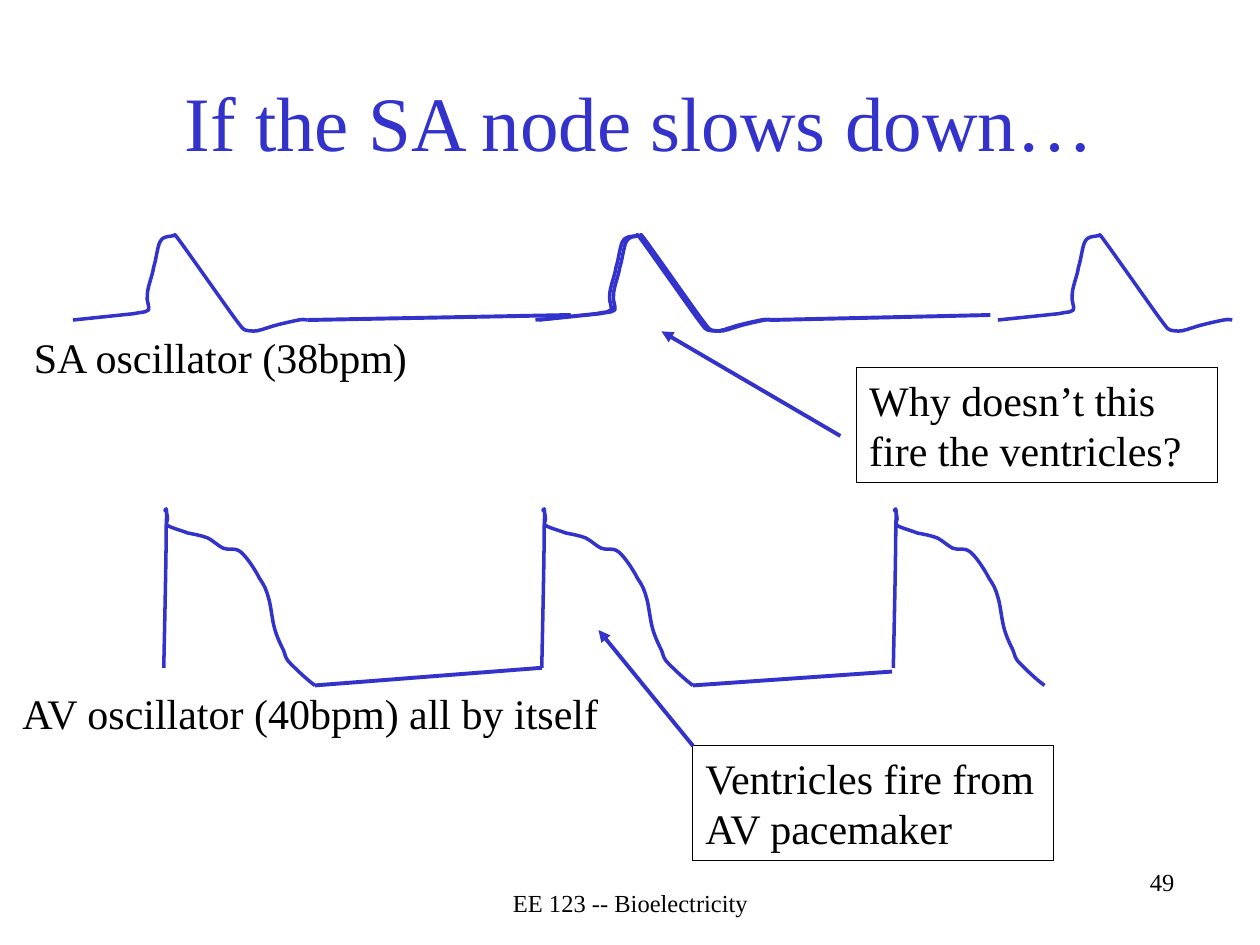
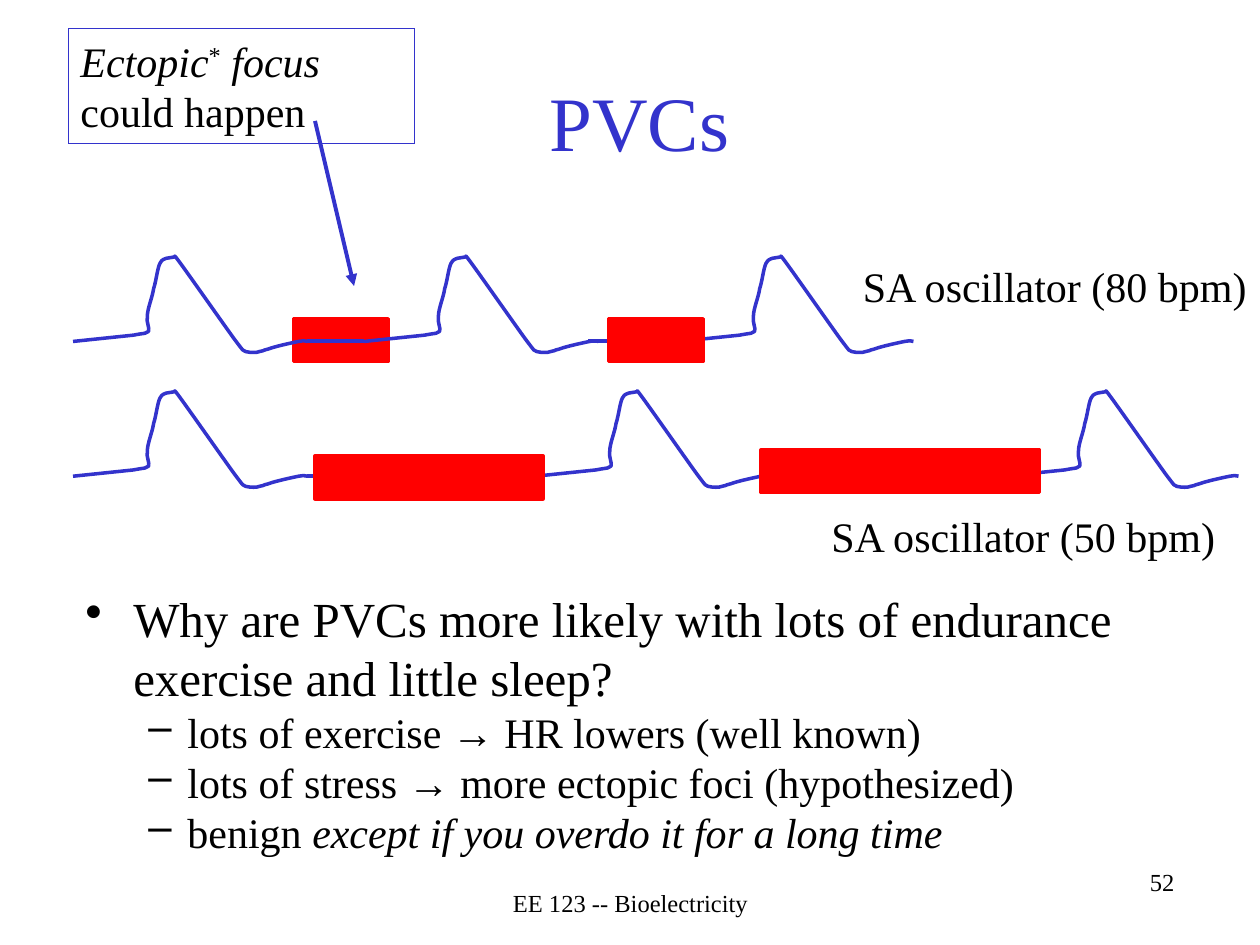
from lxml.etree import SubElement
from pptx import Presentation
from pptx.dml.color import RGBColor
from pptx.enum.shapes import MSO_CONNECTOR, MSO_SHAPE
from pptx.enum.text import MSO_ANCHOR, MSO_AUTO_SIZE, PP_ALIGN
from pptx.oxml.ns import qn
from pptx.util import Inches, Pt

BLUE = RGBColor(0x33, 0x33, 0xCC)
RED = RGBColor(0xFF, 0x00, 0x00)
BLACK = RGBColor(0x00, 0x00, 0x00)
FONT = "Times New Roman"
FOOTER = "EE 123 -- Bioelectricity"

# Beats are in inches from the start on the baseline. A row of two numbers is
# the end of a straight piece; six are two control points and a curve's end.
SA_BEAT = [
    (0.48, -0.05),
    (0.58, -0.07, 0.58, -0.06, 0.60, -0.08),
    (0.61, -0.11, 0.58, -0.15, 0.59, -0.20),
    (0.59, -0.26, 0.63, -0.35, 0.64, -0.42),
    (0.66, -0.48, 0.67, -0.58, 0.69, -0.62),
    (0.71, -0.66, 0.73, -0.65, 0.74, -0.66),
    (0.76, -0.66, 0.78, -0.67, 0.80, -0.67),
    (0.82, -0.66, 0.78, -0.72, 0.86, -0.61),
    (0.94, -0.50, 1.20, -0.13, 1.28, -0.02),
    (1.37, 0.10, 1.34, 0.06, 1.37, 0.08),
    (1.41, 0.09, 1.46, 0.09, 1.48, 0.08),
    (1.51, 0.08, 1.50, 0.07, 1.55, 0.06),
    (1.60, 0.04, 1.74, 0.01, 1.79, 0),
    (1.84, -0.01, 1.85, 0, 1.86, 0),
]
AV_BEAT = [
    (0.01, -0.46, 0.02, -0.92, 0.02, -1.13),
    (0.03, -1.33, 0.01, -1.24, 0.01, -1.25),
    (0.02, -1.26, 0.03, -1.20, 0.03, -1.18),
    (0.03, -1.16, 0.01, -1.14, 0.03, -1.13),
    (0.06, -1.11, 0.14, -1.09, 0.19, -1.07),
    (0.24, -1.06, 0.30, -1.05, 0.35, -1.03),
    (0.39, -1.01, 0.43, -0.97, 0.47, -0.95),
    (0.51, -0.93, 0.56, -0.96, 0.61, -0.92),
    (0.66, -0.88, 0.73, -0.77, 0.76, -0.71),
    (0.80, -0.65, 0.81, -0.63, 0.83, -0.56),
    (0.85, -0.50, 0.86, -0.38, 0.88, -0.31),
    (0.90, -0.24, 0.93, -0.18, 0.95, -0.14),
    (0.97, -0.09, 0.96, -0.08, 1.01, -0.03),
    (1.05, 0.01, 1.12, 0.08, 1.20, 0.14),
]

# Paragraphs are strings or lists of (text, style); styles: i = italic, s = superscript.
# Rows of beats: (beat, baseline, starts). Bars and labels: (left, top, width, height).
SLIDES = [
    {
        "title": "If the SA node slows down…",
        "page": "49",
        "border": BLACK,
        "under": [],
        "beats": [(SA_BEAT, 2.54, (0.58, 4.25, 4.28, 7.92)),
                  (AV_BEAT, 5.30, (1.30, 4.30, 7.09))],
        "links": [(2.44, 2.54, 4.53, 2.50), (6.11, 2.54, 7.86, 2.50),
                  (2.50, 5.44, 4.30, 5.30), (5.50, 5.44, 7.08, 5.33)],
        "over": [],
        "labels": [((0.17, 2.58, 4, 0.5), "SA oscillator (38bpm)"),
                   ((0.08, 5.41, 4.97, 0.5), "AV oscillator (40bpm) all by itself")],
        "notes": [((6.80, 2.92, 2.86, 0.91), ["Why doesn’t this fire the ventricles?"]),
                  ((5.50, 5.92, 2.86, 0.91), ["Ventricles fire from AV pacemaker"])],
        "arrows": [(6.67, 3.46, 5.25, 2.63), (5.50, 5.92, 4.75, 5.00)],
        "points": [],
    },
    {
        "title": "PVCs",
        "page": "52",
        "border": BLUE,
        "under": [(2.33, 2.53, 0.75, 0.34)],
        "beats": [(SA_BEAT, 2.71, (0.58, 2.89, 5.39)),
                  (SA_BEAT, 3.78, (0.58, 4.25, 7.97))],
        "links": [(2.44, 2.71, 2.89, 2.71), (4.67, 2.71, 5.39, 2.71),
                  (2.44, 3.78, 4.25, 3.78), (6.04, 3.78, 7.97, 3.78)],
        "over": [(4.83, 2.53, 0.75, 0.34), (2.50, 3.62, 1.81, 0.34),
                 (6.04, 3.57, 2.21, 0.34)],
        "labels": [((6.75, 2.02, 3.25, 0.5), "SA oscillator (80 bpm)"),
                   ((6.50, 4.00, 3.25, 0.5), "SA oscillator (50 bpm)")],
        "notes": [((0.54, 0.23, 2.75, 0.91),
                   [[("Ectopic", "i"), ("*", "s"), (" focus", "i")], "could happen"])],
        "arrows": [(2.50, 0.96, 2.81, 2.27)],
        "points": [
            (0, "Why are PVCs more likely with lots of endurance exercise and little sleep?"),
            (1, "lots of exercise → HR lowers (well known)"),
            (1, "lots of stress → more ectopic foci (hypothesized)"),
            (1, [("benign ", ""), ("except if you overdo it for a long time", "i")]),
        ],
    },
]
# Bullet levels: mark, size, left indent, hanging indent, space before
LEVELS = [("•", 28, 0.38, 0.38, 5.6), ("–", 24, 0.81, 0.31, 0)]


def fill_par(par, text, size, color):
    """Write a string or a list of styled runs into a paragraph."""
    for part, style in [(text, "")] if isinstance(text, str) else text:
        run = par.add_run()
        run.text = part
        font = run.font
        font.name, font.size, font.color.rgb = FONT, Pt(size), color
        if style == "i":
            font.italic = True
        elif style == "s":
            run._r.get_or_add_rPr().set("baseline", "30000")


def add_text(slide, area, pars, size=24, color=BLACK, align=PP_ALIGN.LEFT,
             anchor=MSO_ANCHOR.TOP, border=None, grow=False):
    area = map(Inches, area)
    if border is None:
        box = slide.shapes.add_textbox(*area)
    else:
        box = slide.shapes.add_shape(MSO_SHAPE.RECTANGLE, *area)
        box._element.remove(box._element.find(qn("p:style")))
        box.fill.background()
        box.line.color.rgb = border  # no width: the thinnest line
    frame = box.text_frame
    frame.word_wrap = True
    frame.vertical_anchor = anchor
    if grow:
        frame.auto_size = MSO_AUTO_SIZE.SHAPE_TO_FIT_TEXT
    for i, text in enumerate(pars):
        par = frame.paragraphs[0] if i == 0 else frame.add_paragraph()
        par.alignment = align
        fill_par(par, text, size, color)
    return frame


def add_points(slide, area, points):
    frame = add_text(slide, area, [])
    for i, (level, text) in enumerate(points):
        par = frame.paragraphs[0] if i == 0 else frame.add_paragraph()
        mark, size, left, hang, space = LEVELS[level]
        par.level = level
        par.space_before = Pt(space)
        fill_par(par, text, size, BLACK)
        props = par._p.get_or_add_pPr()
        props.set("marL", str(Inches(left)))
        props.set("indent", str(-Inches(hang)))
        SubElement(props, qn("a:buChar")).set("char", mark)


def add_beat(slide, beat, left, base):
    """Draw one heartbeat: an open outline whose pieces are bent into curves."""
    ends = [(Inches(left + row[-2]), Inches(base + row[-1])) for row in beat]
    pen = slide.shapes.build_freeform(Inches(left), Inches(base))
    pen.add_line_segments(ends, close=False)
    shape = pen.convert_to_shape()
    pieces = list(shape._element.iter(qn("a:lnTo")))
    for piece, row in zip(pieces, beat):
        if len(row) == 2:
            continue
        piece.tag = qn("a:cubicBezTo")
        piece.remove(piece[0])
        for x, y in zip(row[::2], row[1::2]):
            dot = SubElement(piece, qn("a:pt"))
            dot.set("x", str(Inches(left + x) - shape.left))
            dot.set("y", str(Inches(base + y) - shape.top))
    shape.shadow.inherit = False
    shape.fill.background()
    shape.line.color.rgb = BLUE
    shape.line.width = Pt(2)


def add_bar(slide, area):
    bar = slide.shapes.add_shape(MSO_SHAPE.RECTANGLE, *map(Inches, area))
    bar.shadow.inherit = False
    bar.fill.solid()
    bar.fill.fore_color.rgb = RED
    bar.line.color.rgb = RED
    bar.line.width = Pt(2)


def add_line(slide, ends, arrow=False):
    line = slide.shapes.add_connector(MSO_CONNECTOR.STRAIGHT, *map(Inches, ends))
    line.line.color.rgb = BLUE
    line.line.width = Pt(2.25)
    props = line._element.spPr
    if arrow:
        SubElement(props.find(qn("a:ln")), qn("a:tailEnd")).set("type", "triangle")
    SubElement(props, qn("a:effectLst"))


def add_slide(deck, data):
    slide = deck.slides.add_slide(deck.slide_layouts[6])
    add_text(slide, (6.25, 6.83, 3.17, 0.5), [data["page"]], size=14, align=PP_ALIGN.RIGHT)
    for area in data["under"]:
        add_bar(slide, area)
    add_text(slide, (0.75, 0.33, 8.65, 1.25), [data["title"]], size=44, color=BLUE,
             align=PP_ALIGN.CENTER, anchor=MSO_ANCHOR.MIDDLE)
    add_text(slide, (3.42, 7, 3.17, 0.33), [FOOTER], size=14, align=PP_ALIGN.CENTER)
    for beat, base, starts in data["beats"]:
        for left in starts:
            add_beat(slide, beat, left, base)
    for ends in data["links"]:
        add_line(slide, ends)
    for area in data["over"]:
        add_bar(slide, area)
    for area, text in data["labels"]:
        add_text(slide, area, [text], grow=True)
    for area, pars in data["notes"]:
        add_text(slide, area, pars, border=data["border"], grow=True)
    for ends in data["arrows"]:
        add_line(slide, ends, arrow=True)
    if data["points"]:
        add_points(slide, (0.58, 4.62, 9.17, 2.29), data["points"])


def main():
    deck = Presentation()
    deck.slide_width, deck.slide_height = Inches(10), Inches(7.5)
    for data in SLIDES:
        add_slide(deck, data)
    deck.save("out.pptx")


if __name__ == "__main__":
    main()
